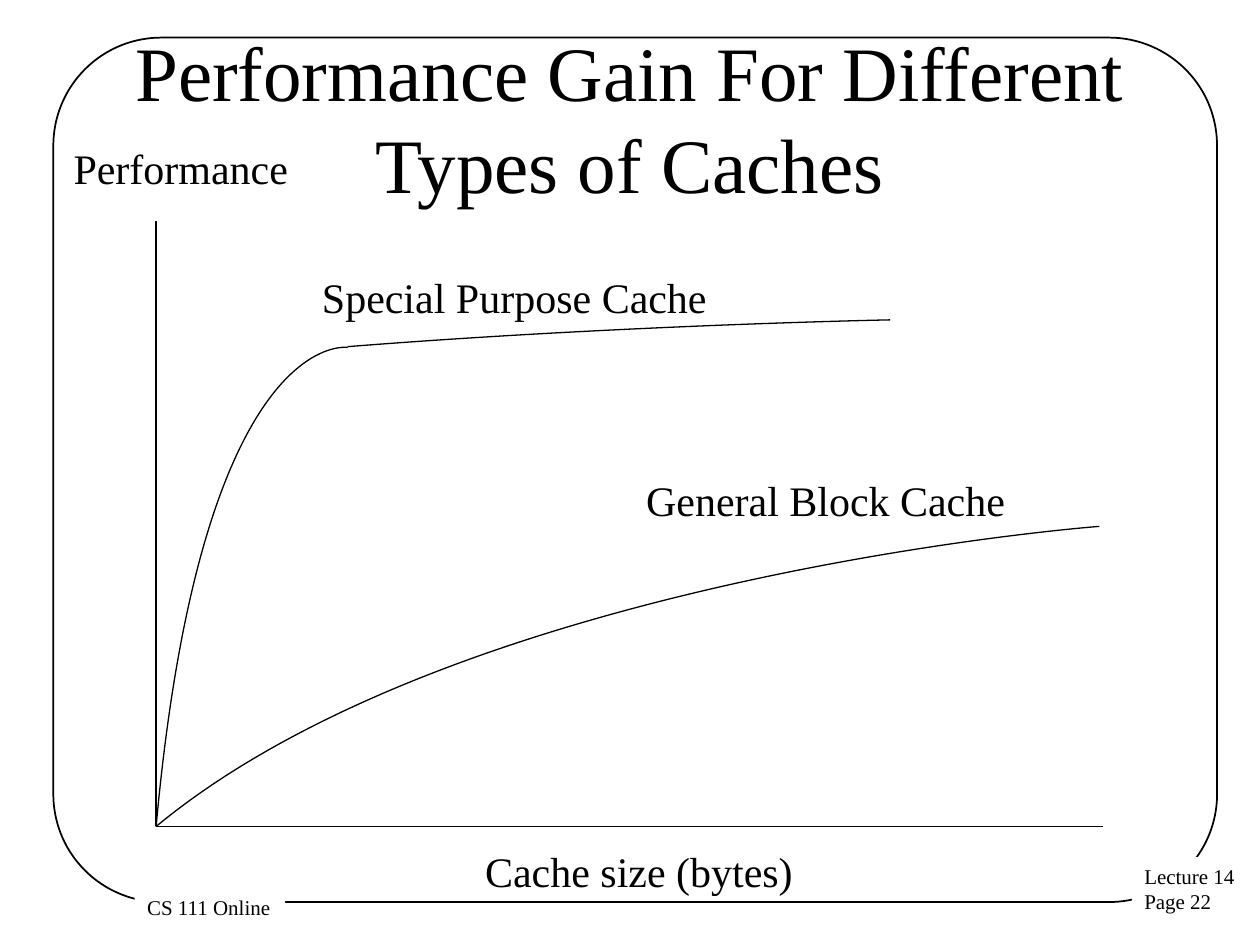
from pptx import Presentation
from pptx.dml.color import RGBColor
from pptx.enum import shapes, text
from pptx.oxml import ns
from pptx.util import Pt
from lxml import etree

COLORS = {"ink": "000000", "paper": "FFFFFF"}
FONT = "Times New Roman"


def color(name):
    return RGBColor.from_string(COLORS[name])


def outline(shape, width):
    shape.line.color.rgb = color("ink")
    shape.line.width = Pt(width)


def write(shape, lines, size, inset=(0, 0), spacing=None, align=text.PP_ALIGN.LEFT):
    frame = shape.text_frame
    frame.auto_size = text.MSO_AUTO_SIZE.NONE
    frame.margin_left = frame.margin_right = Pt(inset[0])
    frame.margin_top = frame.margin_bottom = Pt(inset[1])
    frame.text = "\n".join(lines)
    for para in frame.paragraphs:
        para.alignment = align
        para.line_spacing = spacing
        para.font.name = FONT
        para.font.size = Pt(size)
        para.font.color.rgb = color("ink")
    return frame


def add_border(page, left, top, width, height):
    border = page.shapes.add_shape(shapes.MSO_SHAPE.ROUNDED_RECTANGLE,
                                   Pt(left), Pt(top), Pt(width), Pt(height))
    border.adjustments[0] = 0.125
    border.shadow.inherit = False
    border.fill.background()
    outline(border, 1)


def add_tag(page, left, top, width, height, lines):
    """Small footer text on a white patch that interrupts the border."""
    tag = page.shapes.add_textbox(Pt(left), Pt(top), Pt(width), Pt(height))
    tag.fill.solid()
    tag.fill.fore_color.rgb = color("paper")
    write(tag, lines, 12, inset=(7.2, 3.6)).word_wrap = False


def set_title(page, left, top, width, height, wording):
    title = page.shapes.title
    title.left, title.top = Pt(left), Pt(top)
    title.width, title.height = Pt(width), Pt(height)
    frame = write(title, [wording], 44, inset=(7.2, 3.6), align=text.PP_ALIGN.CENTER)
    frame.vertical_anchor = text.MSO_ANCHOR.MIDDLE


def add_label(page, left, top, width, wording):
    label = page.shapes.add_textbox(Pt(left), Pt(top), Pt(width), Pt(27.4))
    write(label, [wording], 24, spacing=0.93).word_wrap = False


def add_axis(group, start, end):
    axis = group.shapes.add_connector(shapes.MSO_CONNECTOR.STRAIGHT,
                                      *map(Pt, start), *map(Pt, end))
    outline(axis, 0.75)
    etree.SubElement(axis._element.spPr, ns.qn("a:effectLst"))


def add_curve(group, origin, start, control, end):
    """Draw one cubic curve given in points right of and above the origin."""
    first, *rest = [(Pt(origin[0] + x), Pt(origin[1] - y))
                    for x, y in (start, control, end, end)]
    builder = group.shapes.build_freeform(*first)
    builder.add_line_segments(rest, close=False)
    curve = builder.convert_to_shape()
    segments = list(curve._element.iter(ns.qn("a:lnTo")))
    cubic = etree.SubElement(segments[0].getparent(), ns.qn("a:cubicBezTo"))
    for segment in segments:
        cubic.append(segment[0])
        segment.getparent().remove(segment)
    curve.shadow.inherit = False
    curve.fill.background()
    outline(curve, 0.75)


def add_plot(page, left, top, width, height):
    origin = (left, top + height)
    group = page.shapes.add_group_shape()
    add_curve(group, origin, (0, 0), (26, 286.5), (109.5, 273.8))
    add_axis(group, (left, top), origin)
    add_axis(group, (left + width, top + height), origin)
    add_curve(group, origin, (0, 0), (174, 144), (539, 171.5))
    add_curve(group, origin, (109.5, 274.2), (265, 286.5), (419.5, 289.5))
    add_label(page, left + 280, top + 147.6, 207, "General Block Cache")
    add_label(page, left + 94.8, top + 31.7, 222, "Special Purpose Cache")
    add_label(page, left + 188, top + height + 13.4, 178, "Cache size (bytes)")
    add_label(page, left - 47.2, top - 42, 123, "Performance")


def main():
    deck = Presentation()
    deck.slide_width, deck.slide_height = Pt(720), Pt(540)
    page = deck.slides.add_slide(deck.slide_layouts[5])
    add_border(page, 30.5, 21.5, 665, 494)
    add_tag(page, 646.8, 489.8, 67, 37, ["Lecture 14", "Page 22"])
    add_tag(page, 77, 507.5, 86, 22, ["CS 111 Online"])
    set_title(page, 36, 21.6, 648, 90, "Performance Gain For Different Types of Caches")
    add_plot(page, 89.2, 126, 540.8, 346.3)
    deck.save("out.pptx")


if __name__ == "__main__":
    main()
